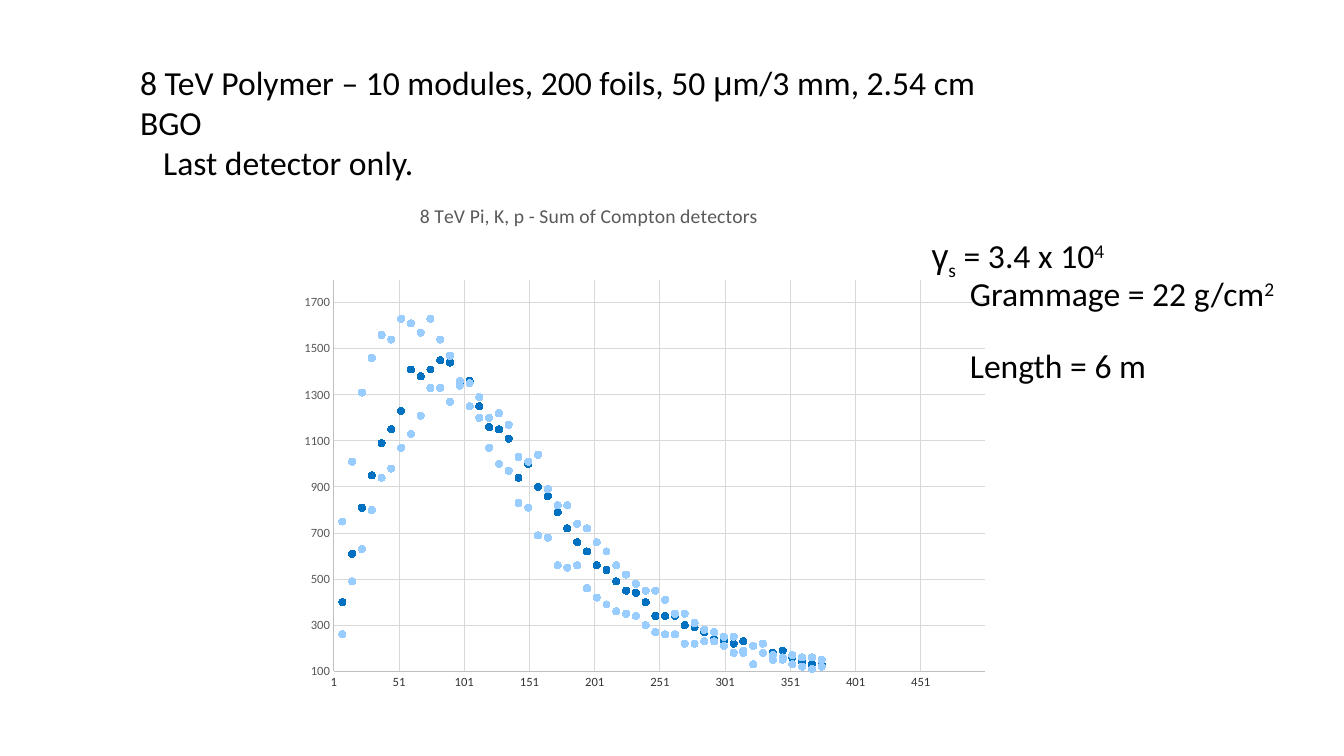
"""Build the slide on the Compton detector signal of the 8 TeV polymer radiator."""
from pptx import Presentation, util as u
from pptx.chart.data import XyChartData
from pptx.dml.color import RGBColor
from pptx.enum import chart as charts, text
from pptx.oxml import parse_xml
from pptx.oxml.ns import nsdecls

WIDTH, HEIGHT = 13.33, 7.5
COLORS = {"black": "000000", "label": "595959", "category": "333333", "axis": "BFBFBF",
          "grid": "D9D9D9", "bound": "99CCFF", "signal": "0070C0"}
HEADING = [
    (0, [("8 TeV Polymer – 10 modules, 200 foils, 50 ", "Calibri"), ("μ", "Arial"),
         ("m/3 mm, 2.54 cm BGO", "Calibri")]),
    (0.23, [("Last detector only.", "Calibri")]),
]
RESULTS = [
    (0, 0, [("γ", "Arial", 0), ("s", "Calibri", -25), (" = 3.4 x 10", "Calibri", 0),
            ("4", "Calibri", 30)]),
    (0.38, 0, [("Grammage = 22 g/cm", "Calibri", 0), ("2", "Calibri", 30)]),
    (0.38, 26, [("Length = 6 m", "Calibri", 0)]),
]
CHART_TITLE = "8 TeV Pi, K, p - Sum of Compton detectors"
STEP = 7.5
SERIES = [
    ("Series 1", "bound", [
        260, 490, 630, 800, 940, 980, 1070, 1130, 1210, 1330, 1330, 1270, 1340,
        1350, 1290, 1200, 1220, 1170, 1030, 1010, 1040, 890, 820, 820, 740, 720,
        660, 620, 560, 520, 480, 450, 450, 410, 350, 350, 310, 280, 270, 250,
        250, 190, 210, 220, 170, 160, 170, 160, 160, 150]),
    ("Series 2", "bound", [
        750, 1010, 1310, 1460, 1560, 1540, 1630, 1610, 1570, 1630, 1540, 1470,
        1360, 1250, 1200, 1070, 1000, 970, 830, 810, 690, 680, 560, 550, 560,
        460, 420, 390, 360, 350, 340, 300, 270, 260, 260, 220, 220, 230, 230,
        210, 180, 180, 130, 180, 150, 150, 130, 120, 110, 120]),
    ("Series 3", "signal", [
        400, 610, 810, 950, 1090, 1150, 1230, 1410, 1380, 1410, 1450, 1440, 1350,
        1360, 1250, 1160, 1150, 1110, 940, 1000, 900, 860, 790, 720, 660, 620,
        560, 540, 490, 450, 440, 400, 340, 340, 340, 300, 290, 270, 240, 230,
        220, 230, 210, 180, 180, 190, 160, 140, 130, 130]),
]
AXES = {"category": (1, 500, 50, "category"), "value": (100, 1800, 200, "label")}


def color(name):
    return RGBColor.from_string(COLORS[name])


def box(*inches):
    return [u.Inches(length) for length in inches]


def style(font, size, name, face="Calibri"):
    font.size, font.name, font.bold = u.Pt(size), face, False
    font.color.rgb = color(name)


def next_paragraph(frame, index, indent):
    paragraph = frame.add_paragraph() if index else frame.paragraphs[0]
    paragraph.alignment = text.PP_ALIGN.LEFT
    paragraph._p.get_or_add_pPr().set("marL", str(u.Inches(indent)))
    return paragraph


def add_run(paragraph, words, face, baseline=0):
    run = paragraph.add_run()
    run.text = words
    style(run.font, 24, "black", face)
    if baseline:
        run._r.get_or_add_rPr().set("baseline", str(baseline * 1000))


def manual_layout(inner=False, **shares):
    target = '<c:layoutTarget val="inner"/>' if inner else ""
    modes = '<c:xMode val="edge"/><c:yMode val="edge"/>'
    values = "".join(f'<c:{key} val="{share}"/>' for key, share in shares.items())
    return parse_xml(f'<c:layout {nsdecls("c")}><c:manualLayout>{target}{modes}{values}'
                     '</c:manualLayout></c:layout>')


def format_axis(axis, minimum, maximum, unit, label):
    axis.minimum_scale, axis.maximum_scale, axis.major_unit = minimum, maximum, unit
    axis.major_tick_mark = axis.minor_tick_mark = charts.XL_TICK_MARK.NONE
    axis.has_major_gridlines = True
    for line, name in ((axis.format.line, "axis"), (axis.major_gridlines.format.line, "grid")):
        line.color.rgb, line.width = color(name), u.Pt(0.75)
    style(axis.tick_labels.font, 9, label)
    axis.tick_labels.number_format = "General"
    axis.tick_labels.number_format_is_linked = False


def add_signal_chart(slide):
    data = XyChartData()
    for name, _, values in SERIES:
        series = data.add_series(name)
        for index, value in enumerate(values, 1):
            series.add_data_point(STEP * index, value)
    chart = slide.shapes.add_chart(charts.XL_CHART_TYPE.XY_SCATTER,
                                   *box(2.45, 1.81, 7.63, 5.39), data).chart
    style(chart.font, 10, "black")
    chart.has_legend = False
    chart.has_title = True
    frame = chart.chart_title.text_frame
    frame.text = CHART_TITLE
    style(frame.paragraphs[0].runs[0].font, 14, "label")
    title = chart.chart_title._element
    for layout in title.findall("{*}layout"):
        title.remove(layout)
    title.find("{*}tx").addnext(manual_layout(x=0.22, y=0.03))
    area = chart._chartSpace.chart.plotArea
    for layout in area.findall("{*}layout"):
        area.remove(layout)
    area.insert(0, manual_layout(True, x=0.113, y=0.179, w=0.846, h=0.721))
    format_axis(chart.category_axis, *AXES["category"])
    format_axis(chart.value_axis, *AXES["value"])
    chart.plots[0].vary_by_categories = False
    for series, (_, name, _) in zip(chart.plots[0].series, SERIES):
        series.smooth = False
        series.format.line.fill.background()
        marker = series.marker
        marker.style, marker.size = charts.XL_MARKER_STYLE.CIRCLE, 5
        marker.format.fill.solid()
        marker.format.fill.fore_color.rgb = color(name)
        marker.format.line.color.rgb = color(name)


def main():
    presentation = Presentation()
    presentation.slide_width, presentation.slide_height = box(WIDTH, HEIGHT)
    slide = presentation.slides.add_slide(presentation.slide_layouts[5])
    add_signal_chart(slide)

    heading = slide.shapes.add_textbox(*box(1.29, 0.56, 8.95, 1.31)).text_frame
    heading.word_wrap = False
    for index, (indent, runs) in enumerate(HEADING):
        paragraph = next_paragraph(heading, index, indent)
        for run in runs:
            add_run(paragraph, *run)

    title = slide.shapes.title
    title.left, title.top, title.width, title.height = box(9.14, 2.36, 3.77, 1.45)
    slide.shapes._spTree.append(title._element)
    frame = title.text_frame
    frame.auto_size = text.MSO_AUTO_SIZE.NONE
    frame.vertical_anchor = text.MSO_ANCHOR.MIDDLE
    for index, (indent, space, runs) in enumerate(RESULTS):
        paragraph = next_paragraph(frame, index, indent)
        paragraph.line_spacing, paragraph.space_before = 0.9, u.Pt(space)
        for run in runs:
            add_run(paragraph, *run)

    presentation.save("out.pptx")


if __name__ == "__main__":
    main()
